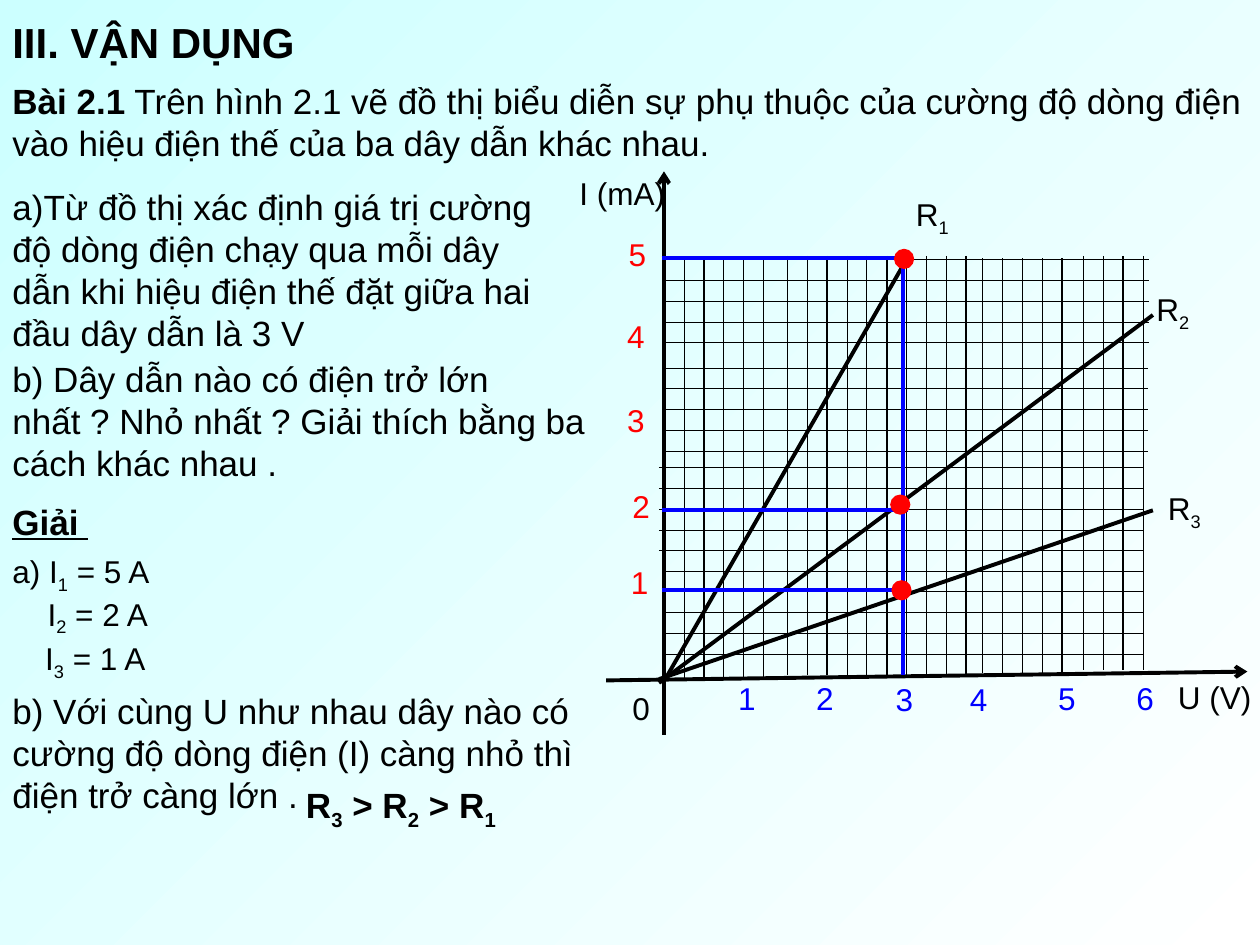
from dataclasses import dataclass
from typing import NamedTuple

from lxml.etree import SubElement
from pptx import Presentation
from pptx.dml.color import RGBColor
from pptx.enum.shapes import MSO_CONNECTOR as Link, MSO_SHAPE as Form
from pptx.enum.text import MSO_AUTO_SIZE as Fit
from pptx.oxml.ns import qn
from pptx.util import Inches, Pt

BLACK = RGBColor(0x00, 0x00, 0x00)
RED = RGBColor(0xFF, 0x00, 0x00)
BLUE = RGBColor(0x00, 0x00, 0xFF)
CYAN = RGBColor(0xCC, 0xFF, 0xFF)
WHITE = RGBColor(0xFF, 0xFF, 0xFF)
FONT = "Arial"
THICK, MID, THIN = 2.25, 0.75, 0.25
DOT = 0.15


class Run(NamedTuple):
    text: str
    bold: bool = False
    sub: bool = False
    line: bool = False


@dataclass
class Label:
    left: float
    top: float
    width: float
    height: float
    runs: list[Run]
    size: int = 18
    color: RGBColor = BLACK
    wrap: bool = True


@dataclass
class Line:
    x1: float
    y1: float
    x2: float
    y2: float
    color: RGBColor = BLACK
    width: float = THICK
    arrow: bool = False


class Band(NamedTuple):
    """Evenly spaced grid lines: first place, count, and the two ends."""
    first: float
    count: int
    start: float
    end: float


def split(text: str, bold: bool = False) -> list[Run]:
    """Make runs of a formula in which each digit after a "_" is a subscript."""
    head, *rest = text.split("_")
    runs = [Run(head, bold)]
    for part in rest:
        runs.append(Run(part[0], bold, sub=True))
        if part[1:]:
            runs.append(Run(part[1:], bold))
    return runs


def draw_line(shapes, line: Line) -> None:
    ends = [Inches(v) for v in (line.x1, line.y1, line.x2, line.y2)]
    link = shapes.add_connector(Link.STRAIGHT, *ends)
    link.line.color.rgb = line.color
    link.line.width = Pt(line.width)
    if line.arrow:
        SubElement(link.line._get_or_add_ln(), qn("a:tailEnd"), type="arrow")
    SubElement(link._element.spPr, qn("a:effectLst"))


def draw_label(shapes, label: Label) -> None:
    place = (label.left, label.top, label.width, label.height)
    frame = shapes.add_textbox(*map(Inches, place)).text_frame
    frame.word_wrap = label.wrap
    frame.auto_size = Fit.SHAPE_TO_FIT_TEXT
    for part in label.runs:
        run = frame.paragraphs[0].add_run()
        run.text = part.text
        font = run.font
        font.name, font.size = FONT, Pt(label.size)
        font.color.rgb = label.color
        font.bold, font.underline = part.bold, part.line
        if part.sub:
            run._r.get_or_add_rPr().set("baseline", "-25000")


def draw_dot(shapes, left: float, top: float) -> None:
    dot = shapes.add_shape(Form.OVAL, *map(Inches, (left, top, DOT, DOT)))
    dot.shadow.inherit = False
    dot.fill.solid()
    dot.fill.fore_color.rgb = RED
    dot.line.color.rgb = RED
    dot.line.width = Pt(MID)


def draw_rows(shapes, band: Band, step: float = 0.165) -> None:
    group = shapes.add_group_shape().shapes
    for i in range(band.count):
        y = band.first + i * step
        draw_line(group, Line(band.start, y, band.end, y, width=THIN))


def draw_cols(shapes, band: Band, step: float = 0.157) -> None:
    """Draw upright grid lines, the fourth of each band thin."""
    group = shapes.add_group_shape().shapes
    for i in range(band.count):
        x = band.first + i * step
        width = THIN if i == 3 else MID
        draw_line(group, Line(x, band.start, x, band.end, width=width))


ROWS = [
    Band(2.06, 5, 5.28, 9.12),
    Band(2.92, 5, 5.26, 9.11),
    Band(3.71, 5, 5.23, 9.08),
    Band(4.53, 5, 5.27, 9.08),
]
COLS = [
    Band(5.43, 5, 2.05, 5.38),
    Band(6.25, 5, 2.03, 5.36),
    Band(7.04, 5, 2.03, 5.36),
    Band(7.80, 5, 2.05, 5.34),
    Band(8.60, 4, 2.03, 5.32),
]
LINES = [
    # axes
    Line(5.27, 5.83, 5.27, 1.36, arrow=True),
    Line(4.81, 5.40, 9.90, 5.33, arrow=True),
    # resistors
    Line(5.28, 5.39, 7.20, 2.05),
    Line(5.23, 5.42, 9.15, 2.50),
    Line(5.23, 5.39, 9.15, 4.05),
    # readings at 3 V
    Line(7.17, 2.03, 7.17, 5.36, BLUE),
    Line(5.25, 4.05, 7.21, 4.05, BLUE),
    Line(5.25, 4.68, 7.19, 4.68, BLUE),
    Line(5.25, 2.05, 7.20, 2.05, BLUE),
]
DOTS = [(7.10, 1.98), (7.07, 3.93), (7.08, 4.61)]
TICKS = [
    ("0", 4.92, 5.42, BLACK),
    ("1", 4.91, 4.42, RED), ("2", 4.92, 3.82, RED), ("3", 4.88, 3.13, RED),
    ("4", 4.88, 2.47, RED), ("5", 4.89, 1.82, RED),
    ("1", 5.76, 5.34, BLUE), ("2", 6.38, 5.34, BLUE), ("3", 7.01, 5.35, BLUE),
    ("4", 7.60, 5.35, BLUE), ("5", 8.30, 5.34, BLUE), ("6", 8.92, 5.34, BLUE),
]
LABELS = [
    Label(0, 0.08, 2.44, 0.5, [Run("III. VẬN DỤNG", True)], 24, wrap=False),
    Label(0, 0.58, 10, 0.77, [
        Run("Bài 2.1", True),
        Run(" Trên hình 2.1 vẽ đồ thị biểu diễn sự phụ thuộc của cường độ "
            "dòng điện vào hiệu điện thế của ba dây dẫn khác nhau."),
    ], 20),
    Label(0, 1.42, 4.58, 1.43, [
        Run("a)Từ đồ thị xác định giá trị cường độ dòng điện chạy qua mỗi dây "
            "dẫn khi hiệu điện thế đặt giữa hai đầu dây dẫn là 3 V"),
    ], 20),
    Label(0, 2.79, 4.83, 1.1, [
        Run("b) Dây dẫn nào có điện trở lớn nhất ? Nhỏ nhất ? "
            "Giải thích bằng ba cách khác nhau ."),
    ], 20),
    Label(0, 3.92, 2.67, 0.43, [Run("Giải ", True, line=True)], 20),
    Label(0, 4.33, 1.75, 0.4, split("a) I_1 = 5 A")),
    Label(0.28, 4.67, 1.5, 0.4, split("I_2 = 2 A")),
    Label(0.26, 5.02, 1.42, 0.4, split("I_3 = 1 A")),
    Label(0, 5.42, 4.67, 1.1, [
        Run("b) Với cùng U như nhau dây nào có cường độ dòng điện (I) "
            "càng nhỏ thì điện trở càng lớn ."),
    ], 20),
    Label(2.33, 6.17, 3.42, 0.43, split("R_3 > R_2 > R_1", True), 20),
    Label(4.5, 1.33, 1.25, 0.4, [Run("I (mA)")]),
    Label(9.25, 5.33, 0.92, 0.4, [Run("U (V)")]),
    Label(7.17, 1.5, 0.58, 0.4, split("R_1")),
    Label(9.08, 2.25, 0.58, 0.4, split("R_2")),
    Label(9.17, 3.83, 0.58, 0.4, split("R_3")),
]


def main() -> None:
    deck = Presentation()
    deck.slide_width, deck.slide_height = Inches(10), Inches(7.5)
    slide = deck.slides.add_slide(deck.slide_layouts[6])
    fill = slide.background.fill
    fill.gradient()
    fill.gradient_angle = 315
    for stop, color in zip(fill.gradient_stops, (CYAN, WHITE)):
        stop.color.rgb = color

    shapes = slide.shapes
    for band in ROWS:
        draw_rows(shapes, band)
    for band in COLS:
        draw_cols(shapes, band)
    for line in LINES:
        draw_line(shapes, line)
    for left, top in DOTS:
        draw_dot(shapes, left, top)
    ticks = [Label(x, y, 0.33, 0.4, [Run(t)], color=c) for t, x, y, c in TICKS]
    for label in LABELS + ticks:
        draw_label(shapes, label)
    deck.save("out.pptx")


if __name__ == "__main__":
    main()
